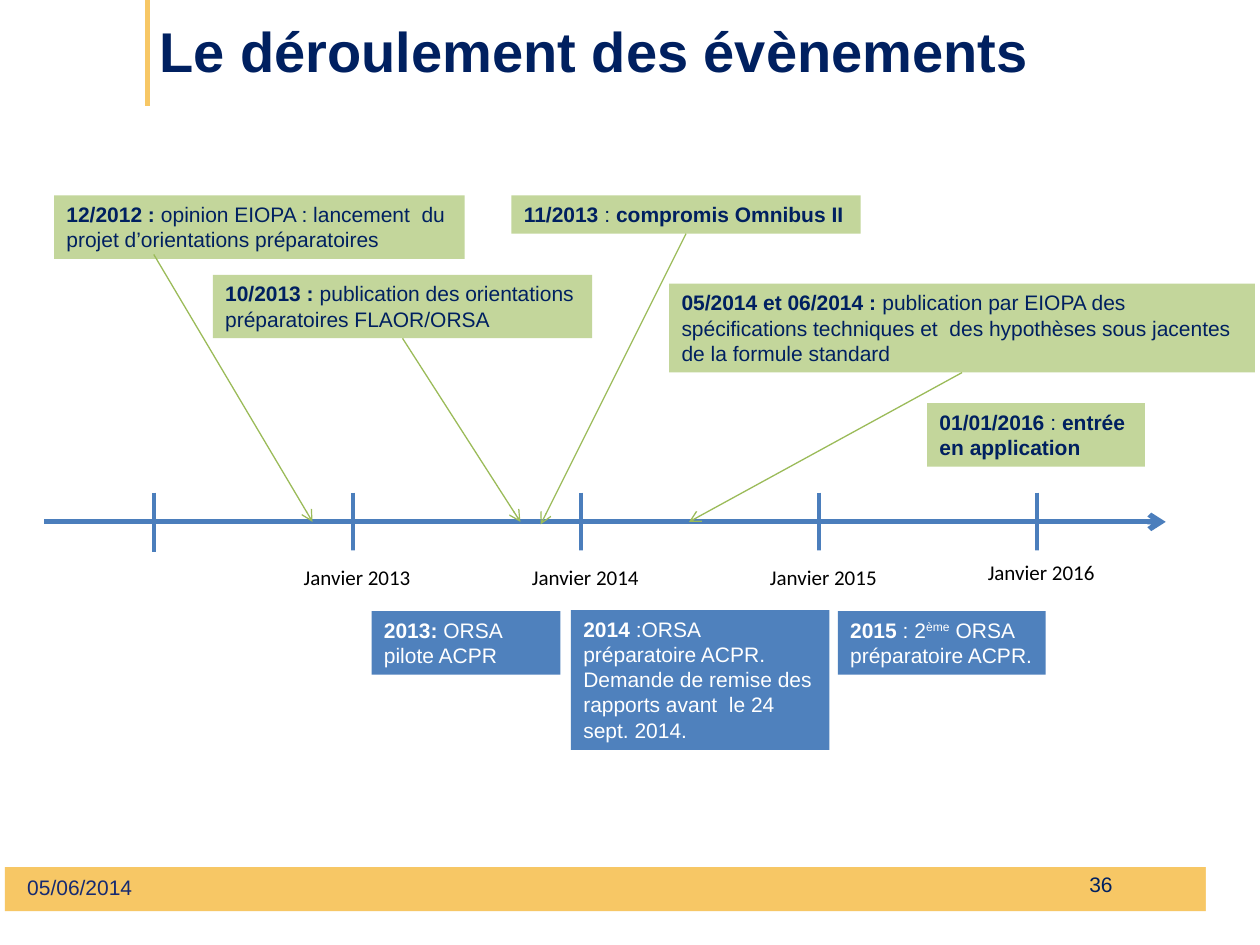
import pptx
import pptx.util
import pptx.dml.color
import pptx.enum.shapes
import pptx.enum.text
from pptx.oxml.ns import qn
from lxml import etree

Cm, Pt = pptx.util.Cm, pptx.util.Pt
RGBColor = pptx.dml.color.RGBColor
SHAPE = pptx.enum.shapes.MSO_SHAPE
ALIGN = pptx.enum.text.PP_ALIGN
ANCHOR = pptx.enum.text.MSO_ANCHOR

NAVY = RGBColor(0x00, 0x20, 0x60)
DATE_BLUE = RGBColor(0x16, 0x2A, 0x71)
GOLD = RGBColor(0xF7, 0xC7, 0x65)
LIGHT_GREEN = RGBColor(0xC3, 0xD6, 0x9B)
GREEN = RGBColor(0x9B, 0xBB, 0x59)
BLUE = RGBColor(0x4F, 0x81, 0xBD)
AXIS_BLUE = RGBColor(0x4B, 0x7E, 0xBC)
WHITE = RGBColor(0xFF, 0xFF, 0xFF)
BLACK = RGBColor(0x00, 0x00, 0x00)

# Each paragraph is a list of (text, style): "b" bold, "" plain, "sup" superscript.
# Boxes and points are in cm.
TITLE = [[("Le déroulement des évènements", "b")]]
EVENTS = [
    dict(box=(1.09, 3.94, 8.28, 1.28), wrap=False, start=(3.1, 5.13), end=(6.3, 10.52),
         paras=[[("12/2012 :", "b"), (" opinion EIOPA : lancement  du", "")],
                [("projet d’orientations préparatoires", "")]]),
    dict(box=(4.29, 5.54, 7.65, 1.28), wrap=False, end=(10.49, 10.52),
         paras=[[("10/2013 :", "b"), (" publication des orientations", "")],
                [("préparatoires FLAOR/ORSA", "")]]),
    dict(box=(10.31, 3.94, 7.04, 0.77), wrap=False, end=(10.9, 10.57),
         paras=[[("11/2013", "b"), (" : ", ""), ("compromis Omnibus II", "b")]]),
    dict(box=(13.49, 5.72, 11.81, 1.79), wrap=True, end=(13.89, 10.52),
         paras=[[("05/2014 et 06/2014 :", "b"),
                 (" publication par EIOPA des spécifications techniques et  des "
                  "hypothèses sous jacentes de la formule standard", "")]]),
    dict(box=(18.69, 8.13, 4.39, 1.28), wrap=False,
         paras=[[("01/01/2016 ", "b"), (": ", ""), ("entrée", "b")],
                [("en application", "b")]]),
]
ORSA_STEPS = [
    ((7.49, 12.32, 3.81, 1.28), [[("2013: ", "b"), ("ORSA pilote ACPR", "")]]),
    ((11.51, 12.3, 5.21, 2.82),
     [[("2014 ", "b"), (":ORSA préparatoire ACPR. Demande de remise des "
                        "rapports avant  le 24 sept. 2014.", "")]]),
    ((16.89, 12.32, 4.19, 1.28),
     [[("2015 ", "b"), (": 2", ""), ("ème", "sup"), (" ORSA préparatoire ACPR.", "")]]),
]
# Tick position, label, label height
TICKS = [(3.1, None, 0), (7.11, "Janvier 2013", 1.0), (11.71, "Janvier 2014", 1.0),
         (16.51, "Janvier 2015", 1.0), (20.9, "Janvier 2016", 0.79)]
AXIS_Y, TICK_TOP, TICK_BOTTOM = 10.52, 9.93, 11.13
LABEL_WIDTH, LABEL_OFFSET = 4.6, 2.21

prs = pptx.Presentation()
prs.slide_width, prs.slide_height = Cm(25.4), Cm(19.05)
s = prs.slides.add_slide(prs.slide_layouts[6])


def write(sp, paras, color, size=12, font="Arial", align=ALIGN.LEFT,
          anchor=ANCHOR.TOP, wrap=True):
    tf = sp.text_frame
    tf.word_wrap, tf.vertical_anchor = wrap, anchor
    for i, runs in enumerate(paras):
        p = tf.paragraphs[0] if i == 0 else tf.add_paragraph()
        p.alignment = align
        for text, style in runs:
            r = p.add_run()
            r.text = text
            r.font.name, r.font.size, r.font.bold = font, Pt(size), style == "b"
            r.font.color.rgb = color
            if style == "sup":
                r.font._element.set("baseline", "30000")


def add_box(box, fill, kind=SHAPE.RECTANGLE):
    sp = s.shapes.add_shape(kind, *map(Cm, box))
    sp.shadow.inherit = False
    sp.fill.solid()
    sp.fill.fore_color.rgb = fill
    sp.line.fill.background()
    return sp


def add_text(box, paras, color, **style):
    write(s.shapes.add_textbox(*map(Cm, box)), paras, color, **style)


def add_line(start, end, color, width, arrow=False):
    line = s.shapes.add_connector(pptx.enum.shapes.MSO_CONNECTOR.STRAIGHT,
                                  *map(Cm, (*start, *end)))
    line.line.color.rgb, line.line.width = color, Pt(width)
    if arrow:
        etree.SubElement(line.line._get_or_add_ln(), qn("a:tailEnd"), type="arrow")
    etree.SubElement(line._element.spPr, qn("a:effectLst"))


# Frame and title
add_box((0.1, 17.48, 24.79, 0.89), GOLD)
add_line((2.97, 0), (2.97, 2.13), GOLD, 2.75)
add_box((24.31, 17.12, 0.71, 1.68), WHITE)
add_text((2.97, -0.08, 18.39, 2.18), TITLE, NAVY, size=32, anchor=ANCHOR.MIDDLE)

# Time axis
add_line((0.89, AXIS_Y), (23.5, AXIS_Y), AXIS_BLUE, 3, arrow=True)
for x, label, height in TICKS:
    add_line((x, TICK_TOP), (x, TICK_BOTTOM), AXIS_BLUE, 2.5)
    if label:
        sp = add_box((x - LABEL_OFFSET, TICK_BOTTOM, LABEL_WIDTH, height), WHITE,
                     SHAPE.ROUNDED_RECTANGLE)
        sp.line.color.rgb, sp.line.width = WHITE, Pt(2)
        write(sp, [[(label, "")]], BLACK, font="Calibri", align=ALIGN.CENTER,
              anchor=ANCHOR.MIDDLE)

# Events above the axis, each arrow leaving the middle of its box unless placed
for event in EVENTS:
    left, top, width, height = event["box"]
    write(add_box(event["box"], LIGHT_GREEN), event["paras"], NAVY, wrap=event["wrap"])
    if "end" in event:
        start = event.get("start", (left + width / 2, top + height))
        add_line(start, event["end"], GREEN, 0.75, arrow=True)

# Steps below the axis
for box, paras in ORSA_STEPS:
    write(add_box(box, BLUE), paras, WHITE)

# Footer
add_text((16.76, 17.32, 5.92, 1.02), [[("36", "")]], NAVY, align=ALIGN.RIGHT,
         anchor=ANCHOR.MIDDLE)
add_text((0.3, 17.5, 5.92, 0.81), [[("05/06/2014", "")]], DATE_BLUE)

prs.save("out.pptx")
